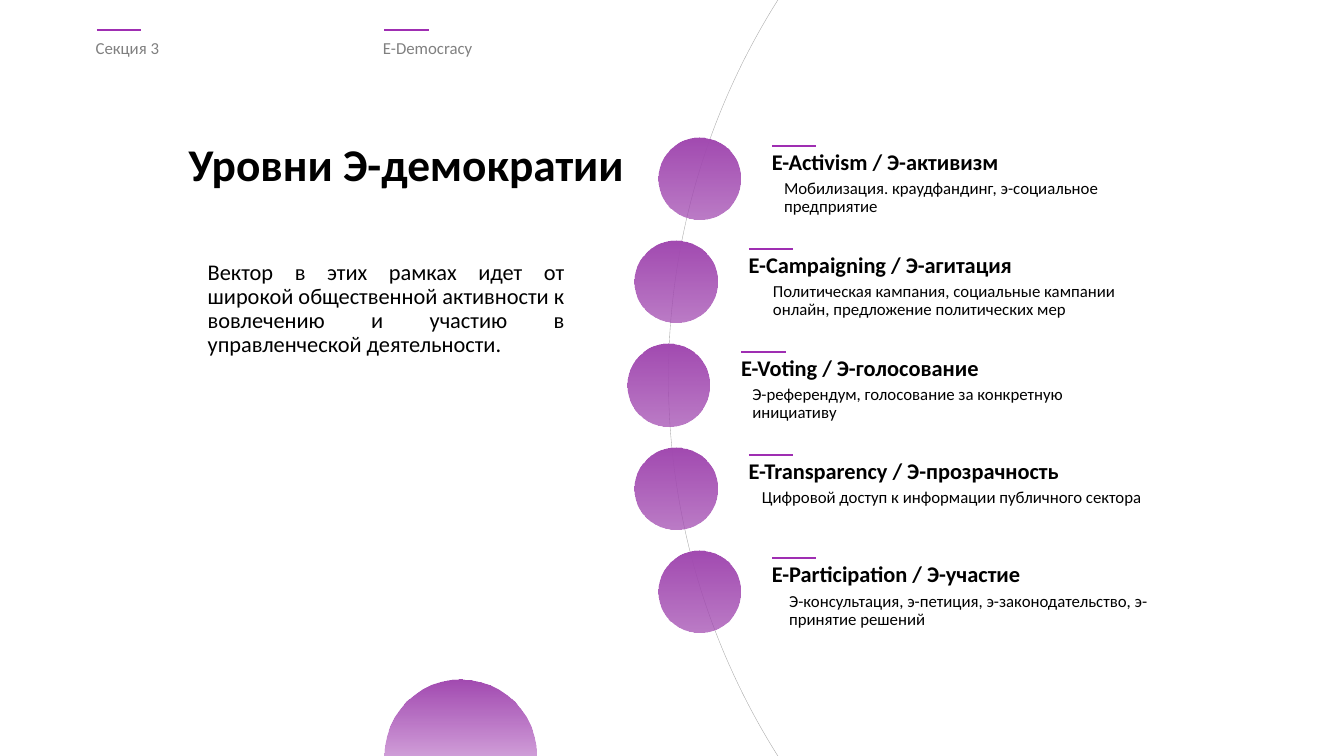
from math import sqrt

from lxml import etree
from pptx import Presentation, util as u
from pptx.dml.color import RGBColor
from pptx.enum import shapes, text
from pptx.oxml import ns

CELL = u.Inches(0.1)
COLS, ROWS = 133.3, 75
FONT = "Calibri"
BLACK = RGBColor(0, 0, 0)
GREY = RGBColor(0x80, 0x80, 0x80)
PALE = RGBColor(0xA6, 0xA6, 0xA6)
PURPLE = RGBColor(0x9F, 0x2E, 0xB2)
LILAC = RGBColor(0xA2, 0x4A, 0xB1)
LEFT, JUST = text.PP_ALIGN.LEFT, text.PP_ALIGN.JUSTIFY

ARC_X, ARC_Y, RADIUS = 136.5, 37.5, 70.2
DISC, STEP, MID = 8.14, 10.23, 38.2
LEVELS = [
    ("E-Activism / Э-активизм",
     "Мобилизация. краудфандинг, э-социальное предприятие", 1.2, 38.4),
    ("E-Campaigning / Э-агитация",
     "Политическая кампания, социальные кампании онлайн, "
     "предложение политических мер", 2.4, 40.7),
    ("E-Voting / Э-голосование",
     "Э-референдум, голосование за конкретную инициативу", 1.1, 38.4),
    ("E-Transparency / Э-прозрачность",
     "Цифровой доступ к информации публичного сектора", 1.3, 40.7),
    ("E-Participation / Э-участие",
     "Э-консультация, э-петиция, э-законодательство, "
     "э-принятие решений", 1.7, 38.1),
]


def scale(*cells):
    """Turn grid cells into slide units."""
    return [round(n * CELL) for n in cells]


def write(shape, words, size, color=BLACK, bold=False, align=LEFT):
    """Fill a text shape with one formatted run."""
    frame = shape.text_frame
    frame.word_wrap = True
    frame.auto_size = text.MSO_AUTO_SIZE.NONE
    frame.vertical_anchor = text.MSO_ANCHOR.TOP
    para = frame.paragraphs[0]
    para.alignment = align
    para.line_spacing = 0.9
    para.space_before = u.Pt(0)
    props = para._p.get_or_add_pPr()
    props.set("marL", "0")
    props.set("indent", "0")
    etree.SubElement(props, ns.qn("a:buNone"))
    run = para.add_run()
    run.text = words
    font = run.font
    font.name, font.size, font.bold = FONT, u.Pt(size), bold
    font.color.rgb = color


def label(slide, box, words, size, **style):
    """Add a text box."""
    write(slide.shapes.add_textbox(*scale(*box)), words, size, **style)


def place(holder, box, words, size, **style):
    """Move a placeholder into its box and fill it."""
    holder.left, holder.top, holder.width, holder.height = scale(*box)
    write(holder, words, size, **style)


def dash(slide, x, y):
    """Draw the short purple rule."""
    line = slide.shapes.add_connector(
        shapes.MSO_CONNECTOR.STRAIGHT, *scale(x, y, x + 4.4, y))
    line.line.color.rgb = PURPLE
    line.line.width = u.Pt(1.25)
    etree.SubElement(line._element.spPr, ns.qn("a:effectLst"))


def ring(slide, box):
    """Draw an outlined circle without fill."""
    oval = slide.shapes.add_shape(shapes.MSO_SHAPE.OVAL, *scale(*box))
    oval.shadow.inherit = False
    oval.fill.background()
    oval.line.color.rgb = PALE
    oval.line.width = u.Pt(0.25)


def disc(slide, box, end, alpha):
    """Draw a circle that fades downwards to the given opacity."""
    oval = slide.shapes.add_shape(shapes.MSO_SHAPE.OVAL, *scale(*box))
    oval.shadow.inherit = False
    oval.line.fill.background()
    oval.fill.gradient()
    oval.fill.gradient_angle = 270
    for stop, color in zip(oval.fill.gradient_stops, (LILAC, end)):
        stop.color.rgb = color
    last = oval._element.xpath(".//a:gs/a:srgbClr")[-1]
    etree.SubElement(last, ns.qn("a:alpha")).set("val", str(alpha * 1000))


def header(slide, box, words):
    """Place a rule with a grey caption below it."""
    x, y, w, h = box
    dash(slide, x + 1.1, y)
    label(slide, (x, y + 0.5, w, h), words, 12, color=GREY, align=JUST)


def level(slide, box, name, note, shift, width):
    """Place a disc, rule, heading and note for one level."""
    x, y, w, h = box
    disc(slide, (x, y, h, h), LILAC, 72)
    dash(slide, x + 11.3, y + 0.8)
    label(slide, (x + 10.3, y + 0.8, w, 2.9), name, 16, bold=True)
    label(slide, (x + 10.3 + shift, y + 3.7, width, 3.9), note, 12)


def levels(slide):
    """Space the levels evenly along the arc."""
    for i, row in enumerate(LEVELS):
        drop = (i - 2) * STEP
        x = ARC_X - sqrt(RADIUS ** 2 - drop ** 2) - DISC / 2
        y = MID + drop - DISC / 2
        level(slide, (x, y, 34, DISC), *row)


def main():
    """Build and save the slide."""
    deck = Presentation()
    deck.slide_width, deck.slide_height = scale(COLS, ROWS)
    slide = deck.slides.add_slide(deck.slide_layouts[1])
    title, body = slide.placeholders
    ring(slide, (ARC_X - RADIUS, ARC_Y - RADIUS, 2 * RADIUS, 2 * RADIUS))
    header(slide, (8.5, 3, 25.3, 5.6), "Секция 3")
    header(slide, (37, 3, 25.3, 5.6), "E-Democracy")
    disc(slide, (38.1, 67.4, 15.1, 15.1), PURPLE, 0)
    place(title, (17.7, 13.6, 45.5, 11.8), "Уровни Э-демократии", 32.4,
          bold=True)
    place(body, (19.6, 25.4, 37.4, 41.1),
          "Вектор в этих рамках идет от широкой общественной активности "
          "к вовлечению и участию в управленческой деятельности.", 16,
          align=JUST)
    levels(slide)
    deck.save("out.pptx")


if __name__ == "__main__":
    main()
